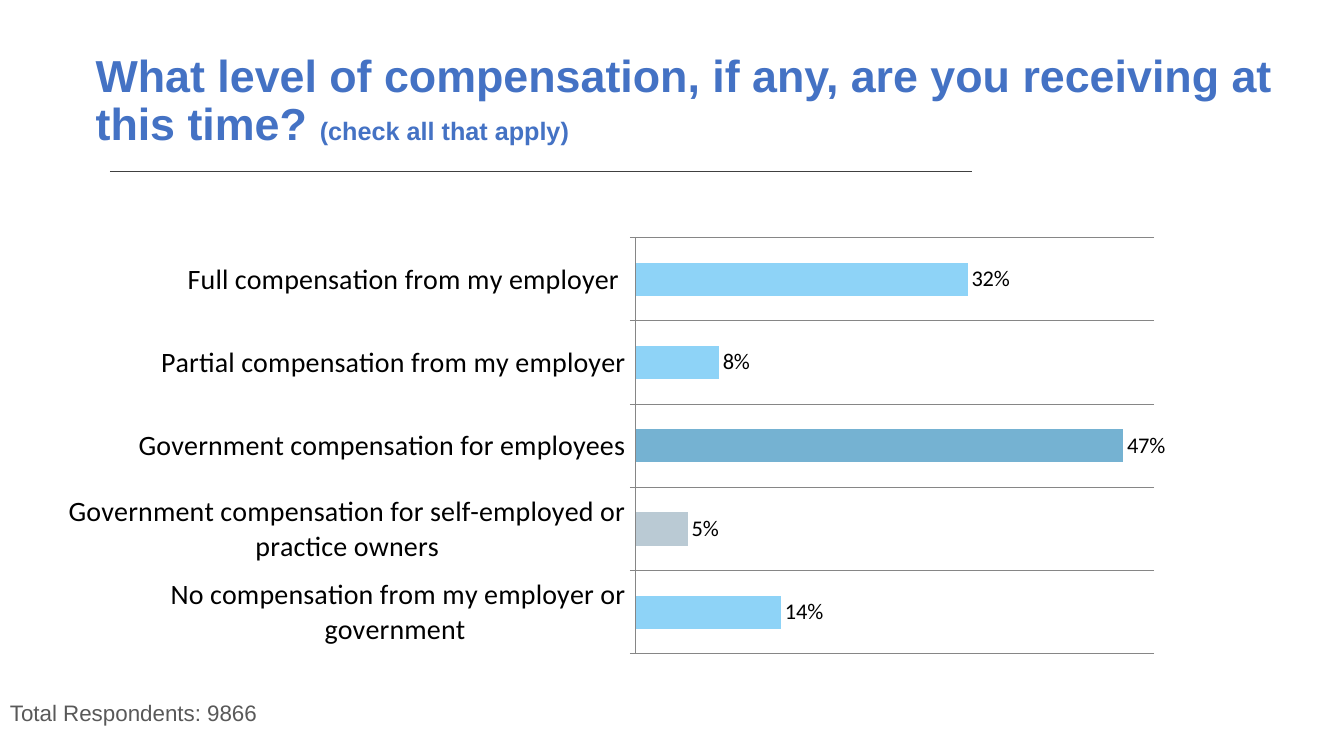
from dataclasses import dataclass

from lxml import etree
from pptx import Presentation
from pptx.chart.data import CategoryChartData
from pptx.dml.color import RGBColor
from pptx.enum.chart import XL_CHART_TYPE, XL_LABEL_POSITION, XL_TICK_MARK
from pptx.enum.shapes import MSO_CONNECTOR
from pptx.enum.text import MSO_ANCHOR
from pptx.oxml import parse_xml
from pptx.oxml.ns import nsdecls, qn
from pptx.util import Cm, Pt

BAR_CLUSTERED = XL_CHART_TYPE.BAR_CLUSTERED
OUTSIDE_END = XL_LABEL_POSITION.OUTSIDE_END
TICK_OUTSIDE = XL_TICK_MARK.OUTSIDE
STRAIGHT = MSO_CONNECTOR.STRAIGHT
TOP, MIDDLE = MSO_ANCHOR.TOP, MSO_ANCHOR.MIDDLE


@dataclass(frozen=True)
class Theme:
    title: RGBColor = RGBColor(0x44, 0x72, 0xC4)
    note: RGBColor = RGBColor(0x59, 0x59, 0x59)
    rule: RGBColor = RGBColor(0x40, 0x40, 0x40)
    grid: RGBColor = RGBColor(0x86, 0x86, 0x86)
    chart_text: RGBColor = RGBColor(0, 0, 0)
    bar: RGBColor = RGBColor(0x8E, 0xD3, 0xF7)
    highlight_bar: RGBColor = RGBColor(0x75, 0xB2, 0xD2)
    muted_bar: RGBColor = RGBColor(0xBA, 0xCA, 0xD4)
    text_font: str = "Arial"
    chart_font: str = "Calibri"
    title_size: int = 32
    hint_size: int = 18
    note_size: int = 16
    category_size: int = 20
    label_size: int = 16


theme = Theme()

presentation = Presentation()
presentation.slide_width = Cm(33.87)
presentation.slide_height = Cm(19.05)
slide = presentation.slides.add_slide(presentation.slide_layouts[6])


def add_text(*runs, left, top, width, height, color, bold=False, anchor=TOP):
    shape = slide.shapes.add_textbox(Cm(left), Cm(top), Cm(width), Cm(height))
    frame = shape.text_frame
    frame.word_wrap = True
    frame.vertical_anchor = anchor
    paragraph = frame.paragraphs[0]
    paragraph.line_spacing = 0.9
    for text, size in runs:
        run = paragraph.add_run()
        run.text = text
        run.font.name = theme.text_font
        run.font.size = Pt(size)
        run.font.bold = bold
        run.font.color.rgb = color


title_rule = slide.shapes.add_connector(STRAIGHT, Cm(2.77), Cm(4.33), Cm(24.49), Cm(4.33))
title_rule.line.color.rgb = theme.rule
title_rule.line.width = Pt(0.5)
etree.SubElement(title_rule._element.spPr, qn("a:effectLst"))

add_text(
    ("What level of compensation, if any, are you receiving at this time? ", theme.title_size),
    ("(check all that apply)", theme.hint_size),
    left=2.16, top=1.83, width=30.48, height=1.47,
    color=theme.title, bold=True, anchor=MIDDLE,
)
add_text(
    ("Total Respondents: 9866", theme.note_size),
    left=0, top=17.58, width=30.48, height=1.07, color=theme.note,
)

compensation = {
    "Full compensation from my employer ": 0.32,
    "Partial compensation from my employer": 0.08,
    "Government compensation for employees": 0.47,
    "Government compensation for self-employed or practice owners": 0.05,
    " No compensation from my employer or government": 0.14,
}
chart_data = CategoryChartData(number_format="0%")
chart_data.categories = list(compensation)
chart_data.add_series("Series 1", list(compensation.values()))
chart = slide.shapes.add_chart(
    BAR_CLUSTERED, Cm(1.7), Cm(5.54), Cm(28.65), Cm(11.28), chart_data
).chart
chart.has_legend = False
chart.has_title = False
chart.font.name = theme.chart_font
chart.font.size = Pt(theme.category_size)
chart.font.color.rgb = theme.chart_text

category_axis = chart.category_axis
category_axis.reverse_order = True
category_axis.major_tick_mark = TICK_OUTSIDE
category_axis.has_major_gridlines = True
category_axis.tick_labels.font.size = Pt(theme.category_size)
for line in (category_axis.format.line, category_axis.major_gridlines.format.line):
    line.color.rgb = theme.grid
    line.width = Pt(0.75)

value_axis = chart.value_axis
value_axis.visible = False
value_axis.has_major_gridlines = False
value_axis.minimum_scale = 0
value_axis.maximum_scale = 0.5

plot = chart.plots[0]
plot.gap_width = 150
plot.vary_by_categories = False
plot.has_data_labels = True
labels = plot.data_labels
labels.show_value = True
labels.position = OUTSIDE_END
labels.number_format = "0%"
labels.number_format_is_linked = False
labels.font.size = Pt(theme.label_size)
labels.font.color.rgb = theme.chart_text

series = plot.series[0]
series.format.fill.solid()
series.format.fill.fore_color.rgb = theme.bar
for index, color in ((2, theme.highlight_bar), (3, theme.muted_bar)):
    fill = series.points[index].format.fill
    fill.solid()
    fill.fore_color.rgb = color

plot_area = chart._chartSpace.chart.plotArea
for layout in plot_area.findall(qn("c:layout")):
    plot_area.remove(layout)
plot_area.insert(0, parse_xml(
    f'<c:layout {nsdecls("c")}><c:manualLayout><c:layoutTarget val="inner"/>'
    '<c:xMode val="edge"/><c:yMode val="edge"/><c:x val="0.5"/><c:y val="0.04"/>'
    '<c:w val="0.456"/><c:h val="0.93"/></c:manualLayout></c:layout>'
))

presentation.save("out.pptx")
